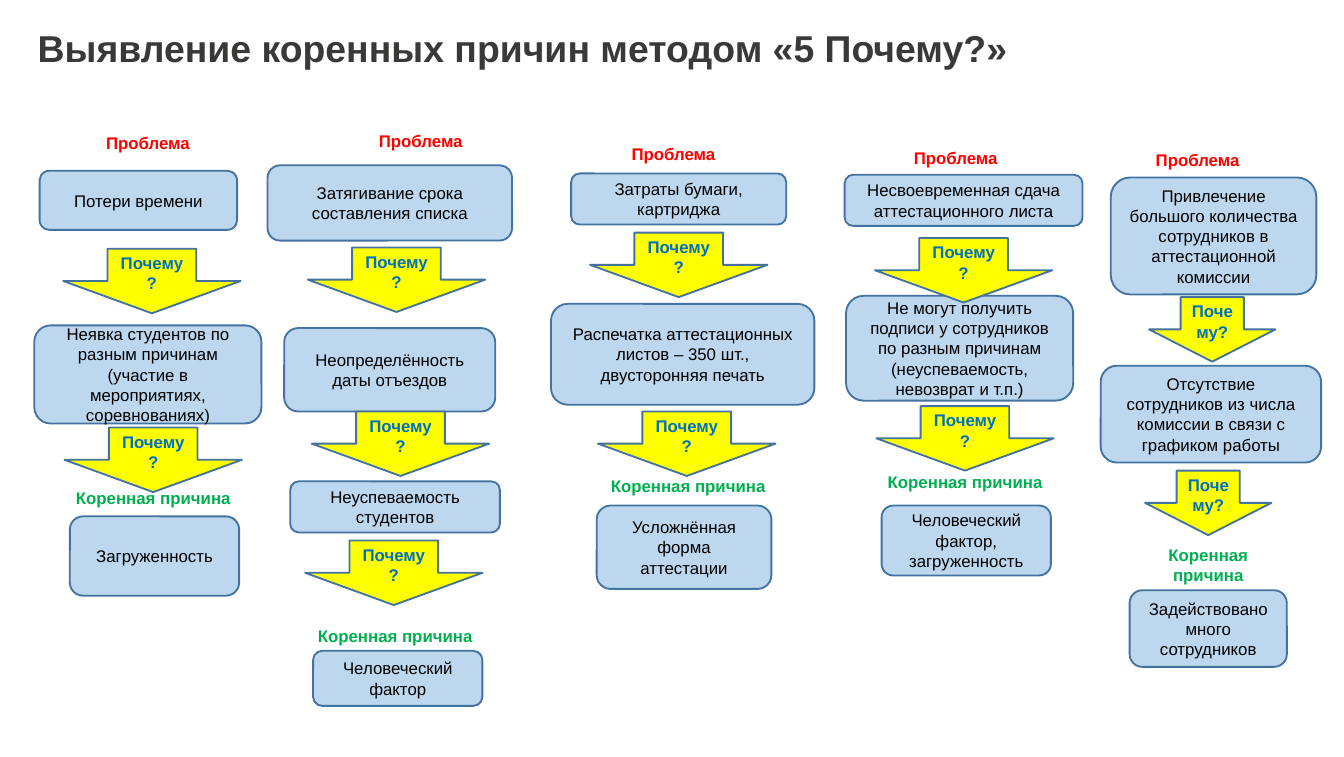
from dataclasses import dataclass

from pptx import Presentation
from pptx.dml.color import RGBColor
from pptx.enum.shapes import MSO_SHAPE
from pptx.enum.text import MSO_ANCHOR, MSO_AUTO_SIZE, PP_ALIGN
from pptx.util import Inches, Pt

ROUNDED, DOWN_ARROW = MSO_SHAPE.ROUNDED_RECTANGLE, MSO_SHAPE.DOWN_ARROW
LEFT, CENTER = PP_ALIGN.LEFT, PP_ALIGN.CENTER
TOP, MIDDLE = MSO_ANCHOR.TOP, MSO_ANCHOR.MIDDLE


@dataclass(frozen=True)
class Theme:
    font: str = "Arial"
    title_size: int = 20
    body_size: int = 9
    title: str = "3B3838"
    body: str = "000000"
    problem: str = "FF0000"
    cause: str = "00B050"
    question: str = "0070C0"
    box_fill: str = "BDD7EE"
    arrow_fill: str = "FFFF00"
    outline: str = "43739E"


THEME = Theme()

# Content: each chain runs downwards along its own axis
TITLE = "Выявление коренных причин методом «5 Почему?»"
TEXTS = {"problem": "Проблема", "why": "Почему?", "cause": "Коренная причина"}
STEP_HEIGHT = {"problem": 0.23, "why": 0.48, "cause": 0.23}

# (axis, top, width of arrows and labels, steps)
# step: (kind, gap above, shift from axis[, height]) or
#       ("box", gap above, shift from axis, height, width, text)
CHAINS = [
    (1.13, 0.95, 1.32, [
        ("problem", 0, -0.03),
        ("box", 0.09, -0.1, 0.44, 1.47, "Потери времени"),
        ("why", 0.14, 0),
        ("box", 0.09, -0.03, 0.73, 1.69,
         "Неявка студентов по разным причинам (участие в мероприятиях, соревнованиях)"),
        ("why", 0.03, 0.01),
        ("cause", -0.07, 0.01),
        ("box", 0.02, 0.02, 0.59, 1.26, "Загруженность"),
    ]),
    (2.95, 0.93, 1.32, [
        ("problem", 0, 0.18),
        ("box", 0.07, -0.05, 0.56, 1.82, "Затягивание срока составления списка"),
        ("why", 0.05, 0),
        ("box", 0.12, -0.05, 0.62, 1.57, "Неопределённость даты отъездов"),
        ("why", 0, 0.03),
        ("box", 0.04, -0.01, 0.38, 1.56, "Неуспеваемость студентов"),
        ("why", 0.06, -0.02),
        ("cause", 0.11, -0.01),
        ("box", 0, 0.01, 0.41, 1.26, "Человеческий фактор"),
    ]),
    (5.05, 1.03, 1.32, [
        ("problem", 0, -0.04),
        ("box", 0.03, 0, 0.38, 1.6, "Затраты бумаги, картриджа"),
        ("why", 0.06, 0),
        ("box", 0.05, 0.03, 0.75, 1.96,
         "Распечатка аттестационных листов – 350 шт., двусторонняя печать"),
        ("why", 0.05, 0.06),
        ("cause", -0.04, 0.07),
        ("box", 0.03, 0.04, 0.62, 1.3, "Усложнённая форма аттестации"),
    ]),
    (7.17, 1.06, 1.32, [
        ("problem", 0, -0.06),
        ("box", 0.01, 0, 0.38, 1.77, "Несвоевременная сдача аттестационного листа"),
        ("why", 0.09, 0),
        ("box", -0.05, -0.03, 0.78, 1.69,
         "Не могут получить подписи у сотрудников по разным причинам "
         "(неуспеваемость, невозврат и т.п.)"),
        ("why", 0.04, 0.01),
        ("cause", -0.03, 0.01),
        ("box", 0.06, 0.02, 0.52, 1.26, "Человеческий фактор, загруженность"),
    ]),
    (9.02, 1.07, 0.94, [
        ("problem", 0, -0.11),
        ("box", 0.02, 0.01, 0.87, 1.53,
         "Привлечение большого количества сотрудников в аттестационной комиссии"),
        ("why", 0.02, 0),
        ("box", 0.03, -0.01, 0.72, 1.64,
         "Отсутствие сотрудников из числа комиссии в связи с графиком работы"),
        ("why", 0.06, -0.03),
        ("cause", 0.03, -0.03, 0.38),
        ("box", 0, -0.03, 0.57, 1.17, "Задействовано много сотрудников"),
    ]),
]


def write(shape, text, size, color, bold, align, anchor):
    frame = shape.text_frame
    frame.word_wrap = True
    frame.auto_size = MSO_AUTO_SIZE.NONE
    frame.vertical_anchor = anchor
    frame.margin_left = frame.margin_right = Inches(0.08)
    frame.margin_top = frame.margin_bottom = Inches(0.04)
    frame.text = text
    para = frame.paragraphs[0]
    para.alignment = align
    para.font.name = THEME.font
    para.font.size = Pt(size)
    para.font.bold = bold
    para.font.color.rgb = RGBColor.from_string(color)


def add_block(page, preset, area, fill):
    block = page.shapes.add_shape(preset, *area)
    block.shadow.inherit = False
    block.fill.solid()
    block.fill.fore_color.rgb = RGBColor.from_string(fill)
    block.line.color.rgb = RGBColor.from_string(THEME.outline)
    block.line.width = Pt(1)
    return block


def place_steps(chains):
    """Stack the steps of every chain, centred on its axis."""
    for axis, cursor, common_width, steps in chains:
        for kind, gap, shift, *details in steps:
            if kind == "box":
                height, width, text = details
            else:
                height = details[0] if details else STEP_HEIGHT[kind]
                width, text = common_width, TEXTS[kind]
            top = cursor + gap
            left = axis + shift - width / 2
            yield kind, text, [Inches(v) for v in (left, top, width, height)]
            cursor = top + height


def draw_step(page, kind, text, area):
    if kind == "box":
        shape = add_block(page, ROUNDED, area, THEME.box_fill)
        color, anchor = THEME.body, MIDDLE
    elif kind == "why":
        shape = add_block(page, DOWN_ARROW, area, THEME.arrow_fill)
        color, anchor = THEME.question, MIDDLE
    else:
        shape = page.shapes.add_textbox(*area)
        color, anchor = getattr(THEME, kind), TOP
    write(shape, text, THEME.body_size, color, kind != "box", CENTER, anchor)


def main():
    deck = Presentation()
    deck.slide_width, deck.slide_height = Inches(10), Inches(5.63)
    page = deck.slides.add_slide(deck.slide_layouts[5])

    # Title
    title = page.shapes.title
    title.left, title.top = Inches(0.2), Inches(0.15)
    title.width, title.height = Inches(7.52), Inches(0.41)
    write(title, TITLE, THEME.title_size, THEME.title, True, LEFT, TOP)

    # Chains: boxes at the back, arrows and labels over them
    layers = ["box", "why", "problem", "cause"]
    for step in sorted(place_steps(CHAINS), key=lambda s: layers.index(s[0])):
        draw_step(page, *step)

    deck.save("out.pptx")


if __name__ == "__main__":
    main()
